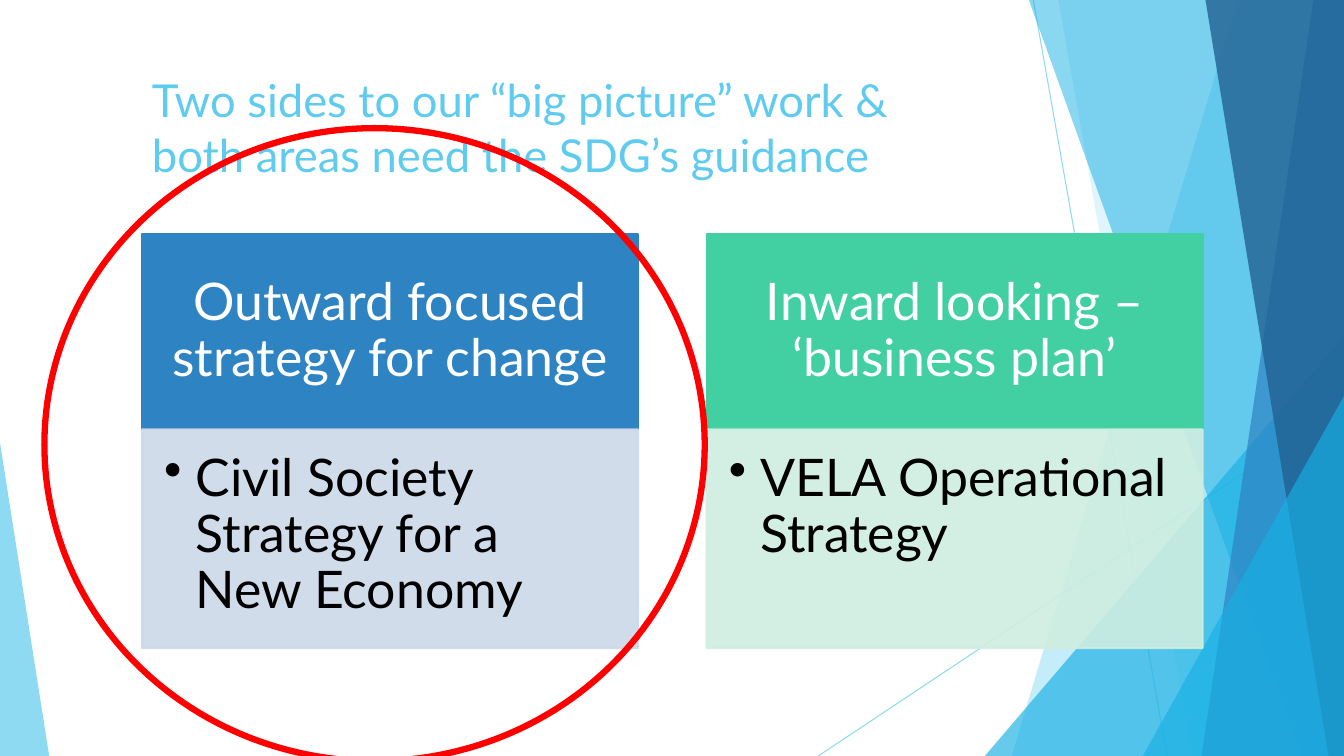
from dataclasses import dataclass

from lxml.etree import SubElement
from pptx import Presentation
from pptx.dml.color import RGBColor
from pptx.enum.shapes import MSO_CONNECTOR, MSO_SHAPE
from pptx.enum.text import MSO_ANCHOR, PP_ALIGN
from pptx.oxml.ns import qn
from pptx.util import Cm, Pt


@dataclass(frozen=True)
class Theme:
    font: str = "Lato"
    title_size: float = 32.4
    card_size: float = 37
    sky: str = "5FCBEF"
    cyan: str = "17B0E4"
    blue: str = "2E83C3"
    navy: str = "226292"
    green: str = "42D0A2"
    pale_blue: str = "CDD9E9"
    pale_green: str = "CFEEE0"
    red: str = "FF0000"
    white: str = "FFFFFF"
    black: str = "000000"


THEME = Theme()
WIDTH, HEIGHT = 33.87, 19.05


def paint(shape, color, opacity=100, border=None):
    """Fill a shape, with an optional border of the same colour and opacity."""
    shape.shadow.inherit = False
    shape.fill.solid()
    shape.fill.fore_color.rgb = RGBColor.from_string(color)
    if border:
        shape.line.color.rgb = RGBColor.from_string(color)
        shape.line.width = Pt(border)
    else:
        shape.line.fill.background()
    if opacity < 100:
        for tint in shape.element.spPr.iter(qn("a:srgbClr")):
            SubElement(tint, qn("a:alpha"), val=str(opacity * 1000))


def write(shape, text, size, color, insets, anchor=MSO_ANCHOR.TOP, align=PP_ALIGN.LEFT):
    """Set one paragraph of text and return it; insets are left, top, right, bottom."""
    frame = shape.text_frame
    frame.text = text
    frame.word_wrap = True
    frame.vertical_anchor = anchor
    (frame.margin_left, frame.margin_top,
     frame.margin_right, frame.margin_bottom) = [Cm(inset) for inset in insets]
    paragraph = frame.paragraphs[0]
    paragraph.alignment = align
    for run in paragraph.runs:
        run.font.name = THEME.font
        run.font.size = Pt(size)
        run.font.color.rgb = RGBColor.from_string(color)
    return paragraph


prs = Presentation()
prs.slide_width, prs.slide_height = Cm(WIDTH), Cm(HEIGHT)
slide = prs.slides.add_slide(prs.slide_layouts[6])
shapes = slide.shapes

# Fine background rays
for start_x, start_y, end_x in [(26.04, 0, 29.41), (WIDTH, 10.24, 20.62)]:
    ray = shapes.add_connector(
        MSO_CONNECTOR.STRAIGHT, Cm(start_x), Cm(start_y), Cm(end_x), Cm(HEIGHT))
    ray.line.color.rgb = RGBColor.from_string(THEME.sky)
    ray.line.width = Pt(0.75)
    for tint in ray.element.spPr.iter(qn("a:srgbClr")):
        SubElement(tint, qn("a:alpha"), val="70000")
    SubElement(ray.element.spPr, qn("a:effectLst"))

# Facets: a band (top x, bottom x) reaches the right edge;
# a triangle (left, top, width, apex) stands on the bottom edge
facets = [
    ((31.19, 25.5), THEME.sky, 36),
    ((26.67, 30.05), THEME.sky, 20),
    ((24.82, 8.46, 9.05, 1), THEME.cyan, 66),
    ((25.93, 32.79), THEME.cyan, 50),
    ((33.1, 30.28), THEME.blue, 70),
    ((30.38, 33.48), THEME.navy, 80),
    ((28.8, 9.98, 5.07, 1), THEME.cyan, 66),
    ((0, 11.15, 1.24, 0), THEME.sky, 70),
]
for geometry, color, opacity in facets:
    if len(geometry) == 2:
        top_x, bottom_x = geometry
        outline = shapes.build_freeform(Cm(top_x), Cm(0))
        outline.add_line_segments(
            [(Cm(WIDTH), Cm(0)), (Cm(WIDTH), Cm(HEIGHT)), (Cm(bottom_x), Cm(HEIGHT))])
        facet = outline.convert_to_shape()
    else:
        left, top, width, apex = geometry
        facet = shapes.add_shape(
            MSO_SHAPE.ISOSCELES_TRIANGLE, Cm(left), Cm(top), Cm(width), Cm(HEIGHT - top))
        facet.adjustments[0] = apex
    paint(facet, color, opacity)

title = shapes.add_textbox(Cm(3.58), Cm(1.7), Cm(28.32), Cm(3.05))
write(title, "Two sides to our “big picture” work &\vboth areas need the SDG’s guidance",
      THEME.title_size, THEME.sky, (0.25, 0.13, 0.25, 0.13))

# Two strategy cards, each a heading over a bulleted body
CARD_LEFT, CARD_TOP, CARD_WIDTH, CARD_PITCH = 3.58, 5.89, 12.5, 14.23
HEADING_HEIGHT, BODY_HEIGHT = 4.93, 5.51
cards = [
    ("Outward focused strategy for change", THEME.blue,
     "Civil Society Strategy for a New Economy", THEME.pale_blue),
    ("Inward looking – ‘business plan’", THEME.green,
     "VELA Operational Strategy", THEME.pale_green),
]
for column, (heading_text, heading_color, body_text, body_color) in enumerate(cards):
    left = CARD_LEFT + column * CARD_PITCH
    heading = shapes.add_shape(
        MSO_SHAPE.RECTANGLE, Cm(left), Cm(CARD_TOP), Cm(CARD_WIDTH), Cm(HEADING_HEIGHT))
    paint(heading, heading_color, border=1.5)
    heading_line = write(heading, heading_text, THEME.card_size, THEME.white,
                         (0.74, 0.41, 0.74, 0.41), MSO_ANCHOR.MIDDLE, PP_ALIGN.CENTER)
    heading_line.line_spacing = 0.9

    body = shapes.add_shape(
        MSO_SHAPE.RECTANGLE, Cm(left), Cm(CARD_TOP + HEADING_HEIGHT),
        Cm(CARD_WIDTH), Cm(BODY_HEIGHT))
    paint(body, body_color, 90, border=1.5)
    bullet = write(body, body_text, THEME.card_size, THEME.black, (0.56, 0.56, 0.74, 0.81))
    bullet.line_spacing = 0.9
    properties = bullet._p.get_or_add_pPr()
    properties.set("marL", str(Cm(0.79)))
    properties.set("indent", str(-Cm(0.79)))
    SubElement(properties, qn("a:buChar"), char="•")

highlight = shapes.add_shape(MSO_SHAPE.OVAL, Cm(1.12), Cm(3.23), Cm(16.64), Cm(15.95))
highlight.shadow.inherit = False
highlight.fill.background()
highlight.line.color.rgb = RGBColor.from_string(THEME.red)
highlight.line.width = Pt(4.5)

prs.save("out.pptx")
